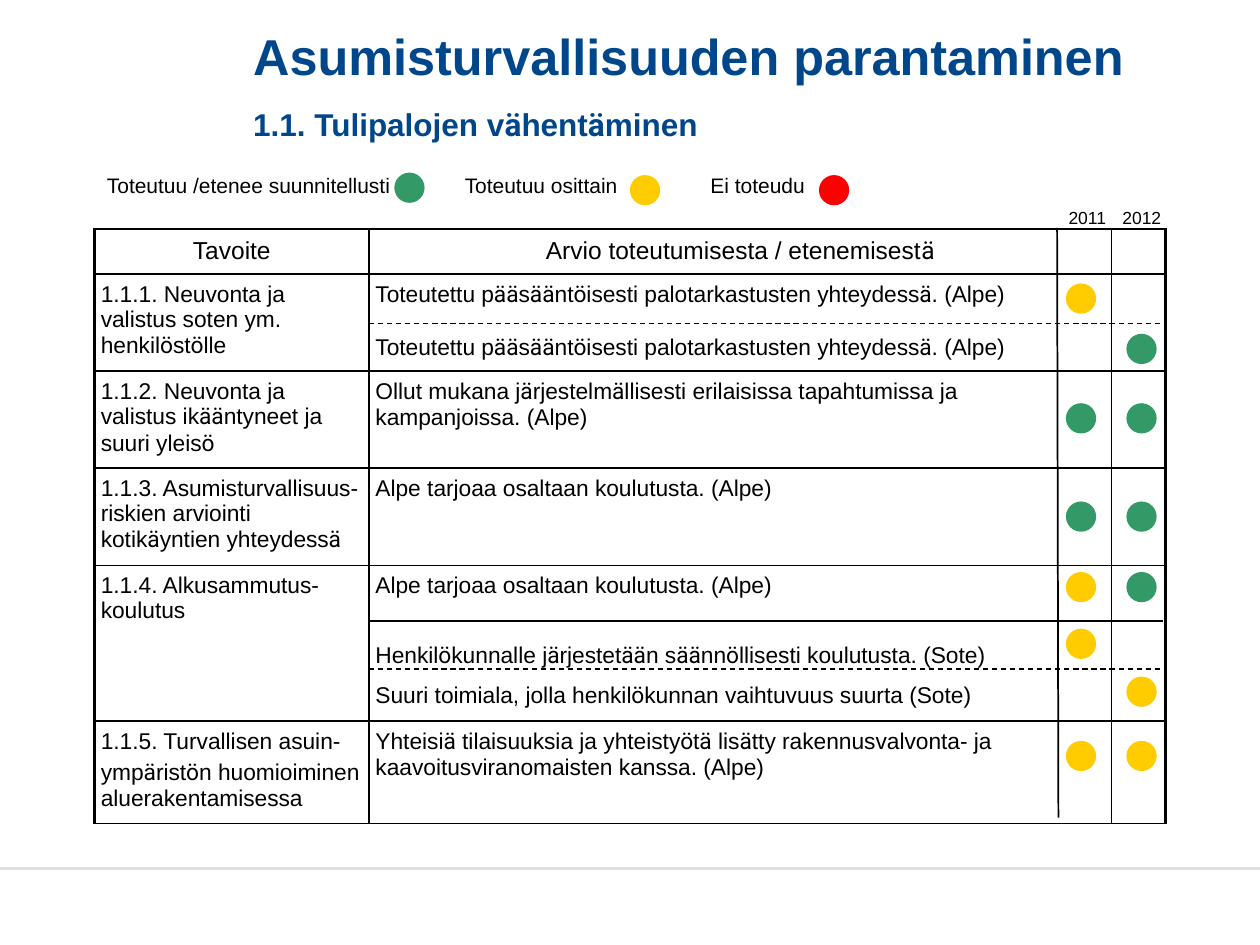
from dataclasses import dataclass
from itertools import groupby

from lxml.etree import SubElement
from pptx import Presentation
from pptx.dml.color import RGBColor
from pptx.enum.dml import MSO_LINE
from pptx.enum.shapes import MSO_CONNECTOR, MSO_SHAPE
from pptx.enum.text import MSO_ANCHOR, PP_ALIGN
from pptx.oxml.ns import qn
from pptx.util import Emu, Inches, Pt

WIDTH, HEIGHT = Inches(10), Inches(7.5)
COLORS = {
    "title": "00468B", "ink": "000000", "paper": "FFFFFF", "rule": "DFDFDF",
    "done": "339966", "partly": "FFCC00", "failed": "FF0000",
}
ACCENTED = "äö"
YEAR_COLUMNS = {"2011": 84.6, "2012": 89.4}
TABLE_LEFT, TABLE_TOP = 7.5, 24.27
TABLE_COLUMNS = [21.8, 58.9, 4.3]


@dataclass(frozen=True)
class Passage:
    text: str
    size: float = 13
    before: float = 0
    spacing: float = 1.0
    align: PP_ALIGN = PP_ALIGN.LEFT
    color: str = "ink"
    bold: bool = False
    tabs: tuple[float, ...] = ()


@dataclass(frozen=True)
class Box:
    left: float
    top: float
    width: float
    height: float


@dataclass(frozen=True)
class Goal:
    height: float
    name: tuple[Passage, ...]
    review: tuple[Passage, ...]


@dataclass(frozen=True)
class Dot:
    left: float
    top: float
    status: str


@dataclass(frozen=True)
class Rule:
    start: tuple[float, float]
    end: tuple[float, float]
    width: float = 0.75
    dashed: bool = False
    color: str = "ink"


INSPECTION = "Toteutettu pääsääntöisesti palotarkastusten yhteydessä. (Alpe)"
TRAINING = Passage("Alpe tarjoaa osaltaan koulutusta. (Alpe)")
GOALS = [
    Goal(4.67, (Passage("Tavoite", 14, align=PP_ALIGN.CENTER),),
         (Passage("Arvio toteutumisesta / etenemisestä", 14, align=PP_ALIGN.CENTER),)),
    Goal(9.87, (Passage("1.1.1. Neuvonta ja valistus soten ym. henkilöstölle"),),
         (Passage(INSPECTION), Passage(INSPECTION, before=15))),
    Goal(9.87, (Passage("1.1.2. Neuvonta ja valistus ikääntyneet ja suuri yleisö"),),
         (Passage("Ollut mukana järjestelmällisesti erilaisissa tapahtumissa ja "
                  "kampanjoissa. (Alpe)"),)),
    Goal(10.27, (Passage("1.1.3. Asumisturvallisuus-riskien arviointi "
                         "kotikäyntien yhteydessä"),), (TRAINING,)),
    Goal(15.6, (Passage("1.1.4. Alkusammutus-koulutus"),),
         (TRAINING,
          Passage("Henkilökunnalle järjestetään säännöllisesti koulutusta. (Sote)\v"
                  "Suuri toimiala, jolla henkilökunnan vaihtuvuus suurta (Sote)",
                  before=18, spacing=1.5))),
    Goal(10.8, (Passage("1.1.5. Turvallisen asuin-"),
                Passage("ympäristön huomioiminen aluerakentamisessa", before=3)),
         (Passage("Yhteisiä tilaisuuksia ja yhteistyötä lisätty rakennusvalvonta- ja "
                  "kaavoitusviranomaisten kanssa. (Alpe)"),)),
]
LEGEND = [Dot(31.3, 18.27, "done"), Dot(50, 18.53, "partly"), Dot(65, 18.53, "failed")]
RATINGS = [
    (30, {"2011": "partly"}),
    (35.33, {"2012": "done"}),
    (42.67, {"2011": "done", "2012": "done"}),
    (53.07, {"2011": "done", "2012": "done"}),
    (60.53, {"2011": "partly", "2012": "done"}),
    (66.53, {"2011": "partly"}),
    (71.6, {"2012": "partly"}),
    (78.4, {"2011": "partly", "2012": "partly"}),
]
RULES = [
    Rule((83.9, 24.13), (84, 86.53), 1),
    Rule((29.3, 34.27), (92.3, 34.27), dashed=True),
    Rule((29.3, 65.73), (92.3, 65.73)),
    Rule((29.3, 70.8), (92.3, 70.8), dashed=True),
]


def across(share: float) -> Emu:
    return Emu(round(WIDTH * share / 100))


def down(share: float) -> Emu:
    return Emu(round(HEIGHT * share / 100))


def color(name: str) -> RGBColor:
    return RGBColor.from_string(COLORS[name])


def write(frame, passages: tuple[Passage, ...]) -> None:
    for index, passage in enumerate(passages):
        paragraph = frame.add_paragraph() if index else frame.paragraphs[0]
        if passage.tabs:
            stops = SubElement(paragraph._p.get_or_add_pPr(), qn("a:tabLst"))
            for stop in passage.tabs:
                SubElement(stops, qn("a:tab"), pos=str(across(stop)), algn="l")
        paragraph.alignment = passage.align
        paragraph.line_spacing = passage.spacing
        paragraph.space_before = Pt(passage.before)
        for number, line in enumerate(passage.text.split("\v")):
            if number:
                paragraph.add_line_break()
            for accented, letters in groupby(line, lambda letter: letter in ACCENTED):
                run = paragraph.add_run()
                run.text = "".join(letters)
                run.font.name = "Roboto" if accented else "Arial"
                run.font.size = Pt(passage.size)
                run.font.bold = passage.bold
                run.font.color.rgb = color(passage.color)


def add_text(slide, box: Box, passages: tuple[Passage, ...],
             margins: tuple[float, ...] = (0.1, 0.05, 0.1, 0.05),
             anchor: MSO_ANCHOR = MSO_ANCHOR.TOP) -> None:
    frame = slide.shapes.add_textbox(across(box.left), down(box.top),
                                     across(box.width), down(box.height)).text_frame
    frame.word_wrap = True
    frame.vertical_anchor = anchor
    (frame.margin_left, frame.margin_top,
     frame.margin_right, frame.margin_bottom) = map(Inches, margins)
    write(frame, passages)


def add_block(slide, preset: MSO_SHAPE, box: Box, fill: str) -> None:
    block = slide.shapes.add_shape(preset, across(box.left), down(box.top),
                                   across(box.width), down(box.height))
    block.shadow.inherit = False
    block.fill.solid()
    block.fill.fore_color.rgb = color(fill)
    block.line.fill.background()


def add_dot(slide, dot: Dot) -> None:
    add_block(slide, MSO_SHAPE.OVAL, Box(dot.left, dot.top, 2.4, 3.2), dot.status)


def add_rule(slide, rule: Rule) -> None:
    connector = slide.shapes.add_connector(
        MSO_CONNECTOR.STRAIGHT, across(rule.start[0]), down(rule.start[1]),
        across(rule.end[0]), down(rule.end[1]))
    connector.line.width = Pt(rule.width)
    connector.line.color.rgb = color(rule.color)
    if rule.dashed:
        connector.line.dash_style = MSO_LINE.DASH
    SubElement(connector._element.spPr, qn("a:effectLst"))


def style_cell(cell, widths: dict[str, float]) -> None:
    cell.margin_left = cell.margin_right = Inches(0.05)
    cell.margin_top = cell.margin_bottom = Inches(0.06)
    properties = cell._tc.get_or_add_tcPr()
    for side, width in widths.items():
        border = SubElement(properties, qn(f"a:ln{side}"), w=str(Pt(width)))
        fill = SubElement(border, qn("a:solidFill"))
        SubElement(fill, qn("a:srgbClr"), val=COLORS["ink"])
    cell.fill.background()


def add_goals(slide) -> None:
    table = slide.shapes.add_table(
        len(GOALS), len(TABLE_COLUMNS), across(TABLE_LEFT), down(TABLE_TOP),
        across(sum(TABLE_COLUMNS)), down(sum(goal.height for goal in GOALS))).table
    table.first_row = table.horz_banding = False
    for column, share in zip(table.columns, TABLE_COLUMNS):
        column.width = across(share)
    for row, goal in enumerate(GOALS):
        table.rows[row].height = down(goal.height)
        for column, passages in enumerate((goal.name, goal.review, ())):
            cell = table.cell(row, column)
            style_cell(cell, {"L": 1 if column else 1.5,
                              "R": 1.5 if column == len(TABLE_COLUMNS) - 1 else 1,
                              "T": 1.5 if row < 2 else 1, "B": 1 if row else 1.5})
            write(cell.text_frame, passages)
            if not passages:
                SubElement(cell.text_frame.paragraphs[0]._p, qn("a:endParaRPr"), sz="1000")


def main() -> None:
    presentation = Presentation()
    presentation.slide_width, presentation.slide_height = WIDTH, HEIGHT
    slide = presentation.slides.add_slide(presentation.slide_layouts[6])
    add_block(slide, MSO_SHAPE.RECTANGLE, Box(0, 92, 100, 8), "paper")
    add_rule(slide, Rule((0, 91.87), (100, 91.87), 1.75, color="rule"))
    add_text(slide, Box(20.1, 3.87, 85, 11.6),
             (Passage("Asumisturvallisuuden parantaminen", 28.8, color="title", bold=True),
              Passage("1.1. Tulipalojen vähentäminen", 18, 11, color="title", bold=True)),
             (0, 0, 0, 0.03), MSO_ANCHOR.BOTTOM)
    add_goals(slide)
    add_text(slide, Box(7.5, 17.6, 70.9, 4),
             (Passage("Toteutuu /etenee suunnitellusti\tToteutuu osittain\tEi toteudu",
                      12, tabs=(28.4, 47.9)),))
    for dot in LEGEND:
        add_dot(slide, dot)
    add_text(slide, Box(84.4, 21.2, 4.2, 3.6), (Passage("2011", 10),), (0.04, 0.05, 0.04, 0.05))
    add_text(slide, Box(88.1, 21.2, 5.3, 3.6), (Passage("2012", 10),))
    for top, statuses in RATINGS:
        for year, status in statuses.items():
            add_dot(slide, Dot(YEAR_COLUMNS[year], top, status))
    for rule in RULES:
        add_rule(slide, rule)
    presentation.save("out.pptx")


if __name__ == "__main__":
    main()
